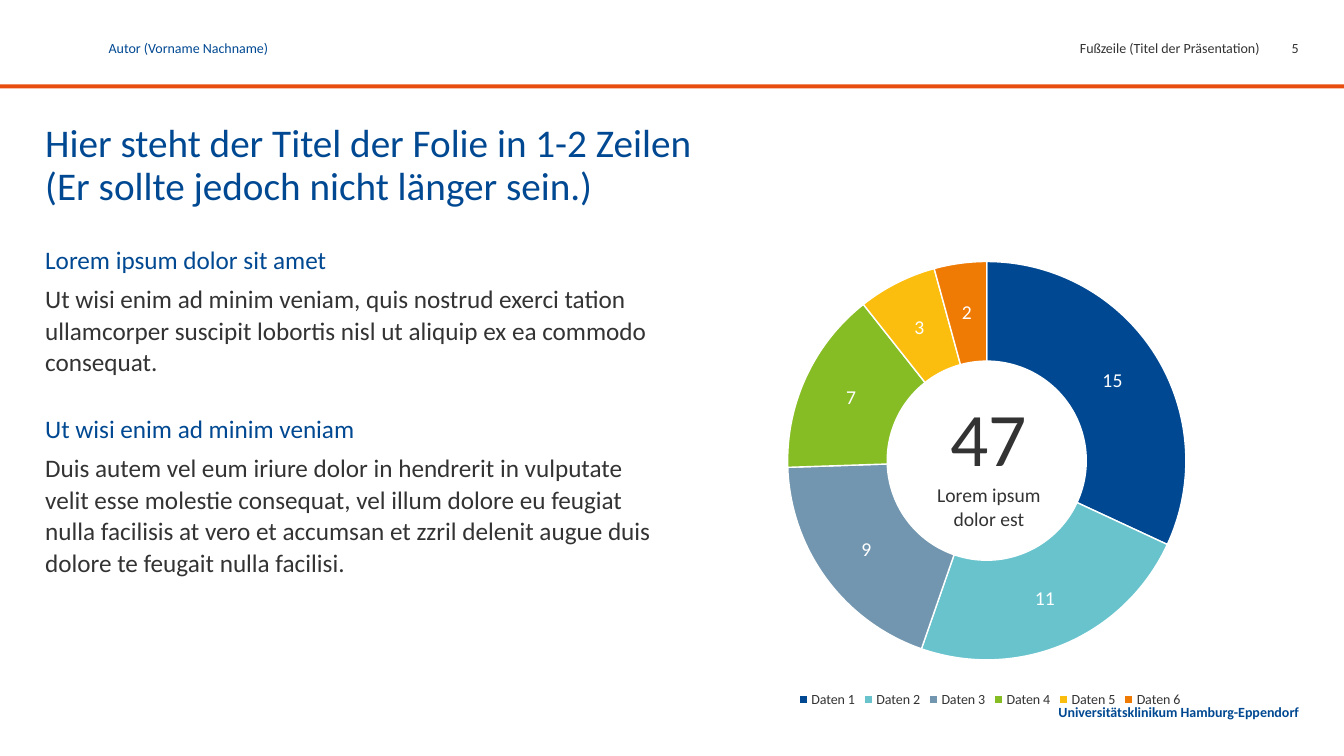
from lxml import etree
from pptx import Presentation
from pptx import util as u
from pptx.chart.data import CategoryChartData
from pptx.dml.color import RGBColor
from pptx.enum import chart as ch
from pptx.enum import shapes, text
from pptx.oxml.ns import qn

BLUE, DARK, WHITE, RED = "004992", "333333", "FFFFFF", "E84E0F"
LEFT, MID, RIGHT = text.PP_ALIGN.LEFT, text.PP_ALIGN.CENTER, text.PP_ALIGN.RIGHT
TOP, CENTER, BASE = text.MSO_ANCHOR.TOP, text.MSO_ANCHOR.MIDDLE, text.MSO_ANCHOR.BOTTOM


def color(code):
    return RGBColor.from_string(code)


class Page:
    face = "Calibri"

    def __init__(self, slide):
        self.slide = slide

    def font(self, font, size, code, bold=False):
        font.name = self.face
        font.size = u.Pt(size)
        font.bold = bold
        font.color.rgb = color(code)

    def frame(self, shape, anchor=TOP, pads=(0, 0, 0, 0)):
        frame = shape.text_frame
        frame.word_wrap = True
        frame.auto_size = text.MSO_AUTO_SIZE.NONE
        frame.vertical_anchor = anchor
        (frame.margin_left, frame.margin_top,
         frame.margin_right, frame.margin_bottom) = map(u.Cm, pads)
        return frame

    def style(self, para, size, code, align=LEFT, line=1.0, before=0, after=0, bold=False):
        para.alignment = align
        para.line_spacing = line
        para.space_before = u.Pt(before)
        para.space_after = u.Pt(after)
        for run in para.runs:
            self.font(run.font, size, code, bold)

    def title(self, box, words):
        shape = self.slide.shapes.title
        shape.left, shape.top, shape.width, shape.height = map(u.Cm, box)
        frame = self.frame(shape)
        frame.text = words
        self.style(frame.paragraphs[0], 28, BLUE, line=0.9)

    def text(self, box, paras, anchor=TOP, pads=(0, 0, 0, 0)):
        frame = self.frame(self.slide.shapes.add_textbox(*map(u.Cm, box)), anchor, pads)
        frame.text = "\n".join(words for words, _ in paras)
        for para, (_, look) in zip(frame.paragraphs, paras):
            self.style(para, **look)

    def bar(self, box, code):
        shape = self.slide.shapes.add_shape(shapes.MSO_SHAPE.RECTANGLE, *map(u.Cm, box))
        shape.shadow.inherit = False
        shape.fill.solid()
        shape.fill.fore_color.rgb = color(code)
        shape.line.fill.background()

    def ring(self, box, names, values, codes, hole, plot_box):
        data = CategoryChartData()
        data.categories = names
        data.add_series("Series 1", values)
        chart = self.slide.shapes.add_chart(
            ch.XL_CHART_TYPE.DOUGHNUT, *map(u.Cm, box), data).chart
        self.font(chart.font, 14, DARK)
        chart.has_title = False
        chart.has_legend = True
        chart.legend.position = ch.XL_LEGEND_POSITION.BOTTOM
        chart.legend.include_in_layout = False
        self.font(chart.legend.font, 10, DARK)
        plot = chart.plots[0]
        plot.vary_by_categories = True
        plot.has_data_labels = True
        plot.data_labels.show_value = True
        plot.data_labels.show_percentage = False
        self.font(plot.data_labels.font, 14, WHITE)
        for index, code in enumerate(codes):
            part = plot.series[0].points[index].format
            part.fill.solid()
            part.fill.fore_color.rgb = color(code)
            part.line.color.rgb = color(WHITE)
            part.line.width = u.Pt(1)
        area = next(chart.element.iter(qn("c:plotArea")))
        next(area.iter(qn("c:holeSize"))).set("val", str(hole))
        for old in area.findall(qn("c:layout")):
            area.remove(old)
        layout = etree.Element(qn("c:layout"))
        area.insert(0, layout)
        manual = etree.SubElement(layout, qn("c:manualLayout"))
        marks = [("layoutTarget", "inner"), ("xMode", "edge"), ("yMode", "edge")]
        for tag, value in marks + list(zip("xywh", plot_box)):
            etree.SubElement(manual, qn(f"c:{tag}")).set("val", str(value))


def main():
    deck = Presentation()
    deck.slide_width, deck.slide_height = u.Cm(33.88), u.Cm(19.05)
    page = Page(deck.slides.add_slide(deck.slide_layouts[5]))

    page.bar((0, 2.13, 33.88, 0.1), RED)
    page.text((24.74, 17.53, 8, 0.61), [(
        "Universitätsklinikum Hamburg-Eppendorf",
        dict(size=10, code=BLUE, align=RIGHT, line=1.05, after=2, bold=True))], BASE)
    page.title((1.14, 3.12, 31.6, 2.01),
               "Hier steht der Titel der Folie in 1-2 Zeilen\v"
               "(Er sollte jedoch nicht länger sein.)")

    page.ring((17.48, 6.12, 14.94, 11.81),
              [f"Daten {num}" for num in range(1, 7)], (15, 11, 9, 7, 3, 2),
              (BLUE, "68C3CD", "7296AF", "87BD24", "FCBE0E", "EF7B05"),
              65, (0.05, 0.04, 0.89, 0.85))

    for left, width, words, code, align in (
            (2.74, 8.41, "Autor (Vorname Nachname)", BLUE, LEFT),
            (17.35, 14.4, "Fußzeile (Titel der Präsentation)", DARK, RIGHT),
            (31.75, 0.99, "5", DARK, RIGHT)):
        page.text((left, 0.91, width, 0.61),
                  [(words, dict(size=10, code=code, align=align))], pads=(0, 0.08, 0, 0))

    head = dict(size=18, code=BLUE, line=1.05)
    body = dict(size=18, code=DARK, line=1.05, before=5, after=5)
    page.text((1.14, 6.12, 15.39, 11.81), [
        ("Lorem ipsum dolor sit amet", head),
        ("Ut wisi enim ad minim veniam, quis nostrud exerci tation ullamcorper "
         "suscipit lobortis nisl ut aliquip ex ea commodo consequat.", body),
        ("Ut wisi enim ad minim veniam", dict(head, before=20)),
        ("Duis autem vel eum iriure dolor in hendrerit in vulputate velit esse "
         "molestie consequat, vel illum dolore eu feugiat nulla facilisis at vero et "
         "accumsan et zzril delenit augue duis dolore te feugait nulla facilisi.", body)])

    page.text((20.93, 8.74, 8, 5.99), [
        ("47", dict(size=54, code=DARK, align=MID, line=0.9)),
        ("Lorem ipsum\vdolor est", dict(size=14, code=DARK, align=MID))],
        CENTER, (0.25, 0.13, 0.25, 0.13))

    deck.save("out.pptx")


if __name__ == "__main__":
    main()
